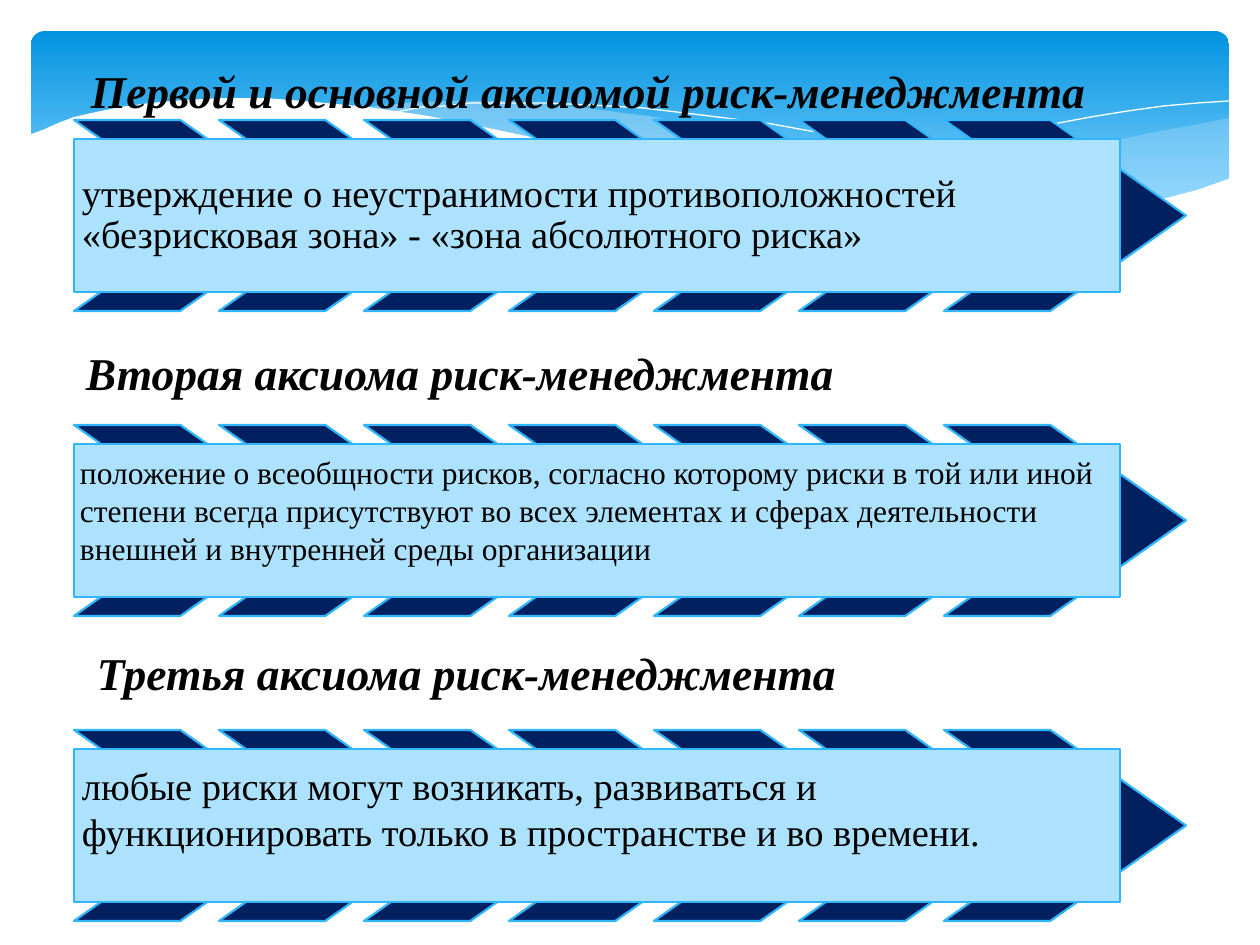
"""Build a slide of three risk-management axioms on chevron bands below a wave header."""
from lxml import etree
from pptx import Presentation
from pptx.dml.color import RGBColor
from pptx.enum.shapes import MSO_SHAPE
from pptx.enum.text import MSO_ANCHOR, PP_ALIGN
from pptx.oxml.ns import qn
from pptx.util import Pt

ROUND_RECT, CHEVRON, RECT = MSO_SHAPE.ROUNDED_RECTANGLE, MSO_SHAPE.CHEVRON, MSO_SHAPE.RECTANGLE
TOP, MIDDLE, BOTTOM = MSO_ANCHOR.TOP, MSO_ANCHOR.MIDDLE, MSO_ANCHOR.BOTTOM
LEFT = PP_ALIGN.LEFT
PX = 914400 / 126

THEME = {
    "font": "Times New Roman",
    "ink": RGBColor.from_string("000000"),
    "white": RGBColor.from_string("FFFFFF"),
    "sky_top": RGBColor.from_string("0293E0"),
    "sky_bottom": RGBColor.from_string("83D3FE"),
    "mist": RGBColor.from_string("C6E7FC"),
    "navy": RGBColor.from_string("002060"),
    "outline": RGBColor.from_string("31B6FD"),
    "panel": RGBColor.from_string("ADE2FE"),
    "title_size": Pt(26),
    "large": Pt(22),
    "small": Pt(18),
    "outline_width": Pt(1.25),
}


def px(*lengths):
    return [round(length * PX) for length in lengths]


def write(frame, text, size, anchor, inset, top_inset, spacing, emphasis):
    frame.word_wrap = True
    frame.vertical_anchor = anchor
    frame.margin_left, frame.margin_right, frame.margin_bottom = px(inset, inset, inset)
    frame.margin_top = px(top_inset)[0]
    paragraph = frame.paragraphs[0]
    paragraph.alignment = LEFT
    paragraph.line_spacing = spacing
    run = paragraph.add_run()
    run.text = text
    run.font.name, run.font.size = THEME["font"], size
    run.font.bold = run.font.italic = emphasis
    run.font.color.rgb = THEME["ink"]


prs = Presentation()
prs.slide_width, prs.slide_height = px(1260, 945)
slide = prs.slides.add_slide(prs.slide_layouts[6])
shapes = slide.shapes

sky = shapes.add_shape(ROUND_RECT, *px(31, 31, 1198, 197))
sky.adjustments[0] = 0.07
sky.shadow.inherit = False
sky.line.fill.background()
sky.fill.gradient()
sky.fill.gradient_angle = 270
sky_start, sky_end = sky.fill.gradient_stops
sky_start.color.rgb, sky_start.position = THEME["sky_top"], 0
sky_end.color.rgb, sky_end.position = THEME["sky_bottom"], 0.9

right_swell = [
    (1229, 118), (1194, 125), (1160, 131), (1123, 139), (1085, 149), (1014, 165),
    (949, 180), (889, 191), (833, 202), (871, 207), (906, 210), (939, 213),
    (969, 215), (998, 217), (1026, 217), (1052, 216), (1076, 215), (1099, 213),
    (1120, 209), (1141, 205), (1160, 202), (1178, 197), (1196, 192), (1213, 185), (1230, 178),
]
middle_swell = [
    (1125, 210), (1091, 207), (1055, 200), (1016, 194), (977, 188), (934, 179),
    (890, 169), (842, 159), (793, 146), (753, 137), (717, 129), (682, 122),
    (648, 116), (616, 112), (586, 108), (557, 105), (529, 103), (503, 101),
    (455, 101), (413, 102), (377, 106), (360, 108), (407, 113), (456, 122),
    (509, 134), (566, 146), (619, 159), (668, 170), (713, 180), (757, 189),
    (799, 197), (838, 203), (876, 208), (910, 212), (942, 214), (974, 216),
    (1003, 218), (1031, 218), (1056, 217), (1080, 215), (1104, 213),
]
falling_crest = [
    (389, 113), (401, 111), (422, 107), (445, 106), (471, 103), (505, 103),
    (546, 103), (591, 105), (643, 108), (701, 115), (766, 123), (838, 136),
    (916, 151), (1002, 171), (1095, 195), (1143, 209),
]
rising_crest = [
    (772, 190), (786, 186), (823, 178), (876, 164), (942, 147), (1016, 131),
    (1091, 117), (1128, 111), (1164, 106), (1198, 103), (1229, 101),
]
white_wave = [
    (1231, 178), (1197, 190), (1159, 200), (1118, 209), (1071, 214), (1019, 215),
    (959, 214), (892, 208), (816, 197), (730, 181), (634, 161), (563, 144),
    (493, 129), (428, 116), (368, 107), (315, 102), (266, 98), (223, 98),
    (184, 100), (150, 103), (120, 107), (96, 112), (74, 117), (58, 123),
    (45, 129), (29, 135), (29, 282), (1231, 282),
]
for points, fill, opacity in [
    (right_swell, "mist", 29),
    (middle_swell, "mist", 40),
    (falling_crest, None, 100),
    (rising_crest, None, 100),
    (white_wave, "white", 100),
]:
    builder = shapes.build_freeform(*points[0], scale=PX)
    builder.add_line_segments(points[1:], close=fill is not None)
    wave = builder.convert_to_shape()
    wave.shadow.inherit = False
    if fill:
        wave.fill.solid()
        wave.fill.fore_color.rgb = THEME[fill]
        wave.line.fill.background()
    else:
        wave.fill.background()
        wave.line.color.rgb = THEME["white"]
        wave.line.width = 0
    if opacity < 100:
        color = wave.fill._xPr.find(qn("a:solidFill"))[0]
        etree.SubElement(color, qn("a:alpha"), val=str(opacity * 1000))

axioms = [
    ("Первой и основной аксиомой риск-менеджмента", 77, 39,
     "утверждение о неустранимости противоположностей «безрисковая зона» - «зона абсолютного риска»",
     "large", MIDDLE, 8, 8, 0.9),
    ("Вторая аксиома риск-менеджмента", 72, 321,
     "положение о всеобщности рисков, согласно которому риски в той или иной степени всегда "
     "присутствуют во всех элементах и сферах деятельности внешней и внутренней среды организации",
     "small", TOP, 6, 9, 1.0),
    ("Третья аксиома риск-менеджмента", 83, 621,
     "любые риски могут возникать, развиваться и функционировать только в пространстве и во времени.",
     "large", TOP, 8, 13, 1.0),
]
BAND_LEFT, BAND_TOP, BAND_PITCH = 74, 120, 305
CHEVRON_COUNT, CHEVRON_PITCH = 7, 145

for row, (title, title_x, title_y, body, size, anchor, inset, top_inset, spacing) in enumerate(axioms):
    band_y = BAND_TOP + row * BAND_PITCH
    band = []
    for column in range(CHEVRON_COUNT):
        arrow = shapes.add_shape(CHEVRON, *px(BAND_LEFT + column * CHEVRON_PITCH, band_y, 242, 191))
        arrow.adjustments[0] = 0.71
        band.append((arrow, "navy"))
    panel = shapes.add_shape(RECT, *px(BAND_LEFT, band_y + 19, 1046, 153))
    band.append((panel, "panel"))
    for part, fill in band:
        part.shadow.inherit = False
        part.fill.solid()
        part.fill.fore_color.rgb = THEME[fill]
        part.line.color.rgb = THEME["outline"]
        part.line.width = THEME["outline_width"]
    write(panel.text_frame, body, THEME[size], anchor, inset, top_inset, spacing, False)
    heading = shapes.add_textbox(*px(title_x, title_y, 1032, 93))
    write(heading.text_frame, title, THEME["title_size"], BOTTOM, 14, 14, 0.9, True)

prs.save("out.pptx")
